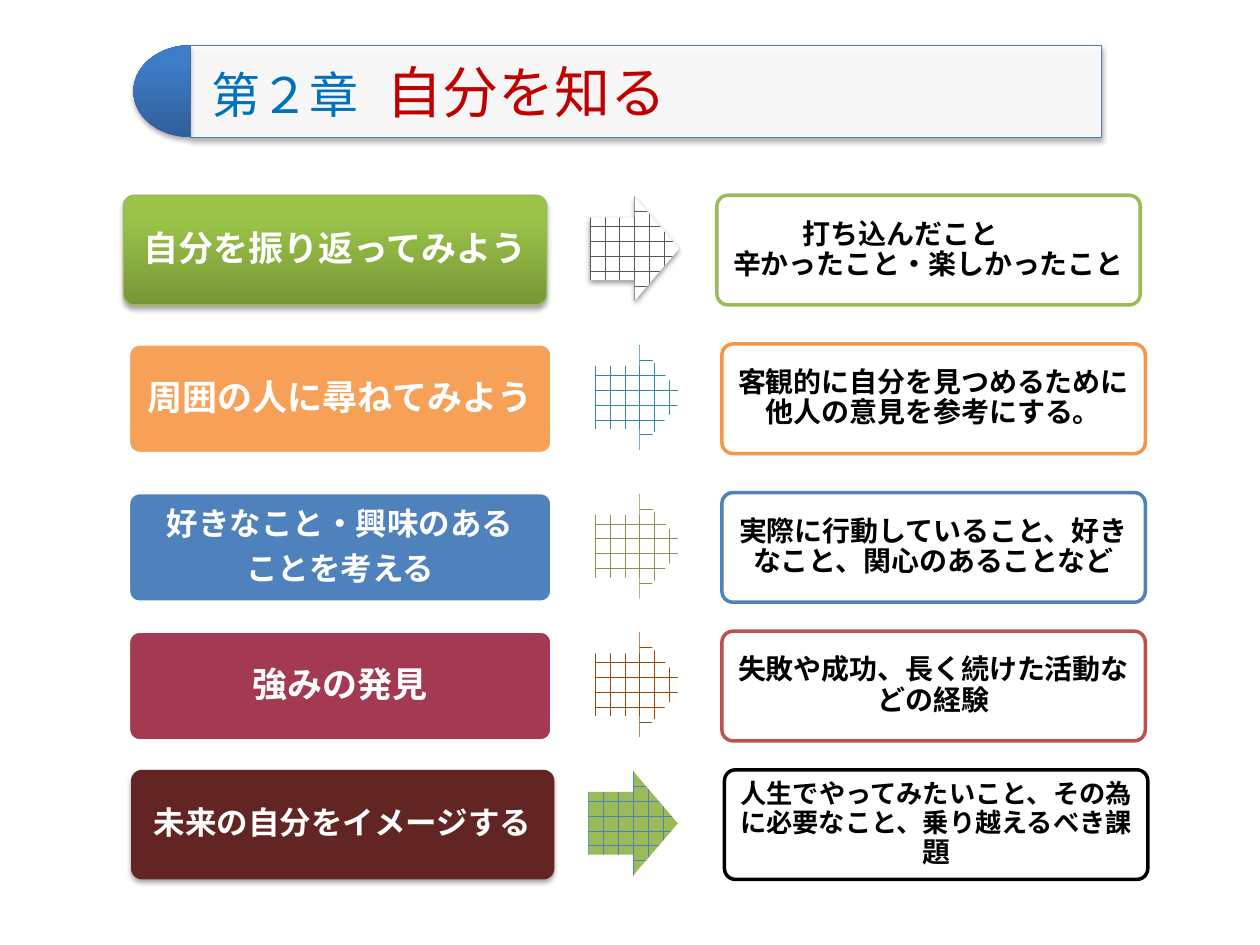
from lxml import etree
from pptx import Presentation
from pptx import util as u
from pptx.dml.color import RGBColor
from pptx.enum import dml, shapes, text
from pptx.oxml.ns import qn

HUES = dict(
    white="FFFFFF", black="000000", green="9BBB59", edge="98B955", moss="779737", lime="9BC348",
    orange="F79646", blue="4F81BD", wine="A43A51", red="C0504D", brown="632523",
    grey="595959", teal="31859C", sand="948A54", rust="984807",
    navy="2F5F99", sky="3D7CC7", frame="4B7EBC", azure="0070C0", crimson="C00000",
)
SANS = "Noto Sans CJK JP"


def hue(name):
    return RGBColor.from_string(HUES[name])


def dress(item, fill, line=None, width=2, alpha=None, pattern=None, shade=None):
    if pattern:
        item.fill.patterned()
        item.fill.pattern = dml.MSO_PATTERN.HORIZONTAL_BRICK
        item.fill.fore_color.rgb = hue(pattern)
        item.fill.back_color.rgb = hue(fill)
    elif isinstance(fill, tuple):
        item.fill.gradient()
        item.fill.gradient_angle = 90
        for stop, name, pos in zip(item.fill.gradient_stops, fill, (0, 0.8)):
            stop.color.rgb = hue(name)
            stop.position = pos
    else:
        item.fill.solid()
        item.fill.fore_color.rgb = hue(fill)
    props = item._element.spPr
    if alpha:
        tone = props.find(qn("a:solidFill"))[0]
        etree.SubElement(tone, qn("a:alpha"), val=str(alpha * 1000))
    if line:
        item.line.color.rgb = hue(line)
        item.line.width = u.Pt(width)
    else:
        item.line.fill.background()
    effects = etree.SubElement(props, qn("a:effectLst"))
    if shade:
        name, dim, blur, dist = shade
        cast = etree.SubElement(effects, qn("a:outerShdw"), blurRad=str(u.Pt(blur)),
                                dist=str(u.Pt(dist)), dir="5400000", rotWithShape="0")
        tone = etree.SubElement(cast, qn("a:srgbClr"), val=HUES[name])
        etree.SubElement(tone, qn("a:alpha"), val=str(dim * 1000))


def say(item, words, size=16, face="Calibri", tint="black", bold=True, pad=0.07,
        align=text.PP_ALIGN.CENTER, pitch=0.9):
    frame = item.text_frame
    frame.word_wrap = True
    frame.auto_size = text.MSO_AUTO_SIZE.NONE
    frame.vertical_anchor = text.MSO_ANCHOR.MIDDLE
    frame.margin_left = frame.margin_right = u.Inches(pad)
    frame.margin_top = frame.margin_bottom = u.Inches(pad)
    for i, row in enumerate(words.split("\n")):
        para = frame.add_paragraph() if i else frame.paragraphs[-1]
        para.alignment, para.line_spacing = align, pitch
        para.space_after = u.Pt(size * 0.35)
        for j, part in enumerate(row.split("\v")):
            if j:
                para.add_line_break()
                gap = para._p.findall(qn("a:br"))[-1]
                etree.SubElement(gap, qn("a:rPr"), sz=str(size * 100))
            run = para.add_run()
            run.text = part
            run.font.size, run.font.bold, run.font.name = u.Pt(size), bold, face
            run.font.color.rgb = hue(tint)
            etree.SubElement(run._r.rPr, qn("a:ea"), typeface=SANS)


deck = Presentation()
deck.slide_width, deck.slide_height = u.Inches(10), u.Inches(7.5)
slide = deck.slides.add_slide(deck.slide_layouts[5])
kind = shapes.MSO_SHAPE
soft = ("black", 35, 3.1, 1.8)

cap = slide.shapes.add_shape(kind.PIE, *map(u.Inches, (1.06, 0.36, 0.9, 0.73)))
cap.adjustments[0], cap.adjustments[1] = 54, 162
dress(cap, ("navy", "sky"), shade=soft)

title = slide.shapes.title
title.left, title.top, title.width, title.height = map(u.Inches, (1.51, 0.36, 7.23, 0.73))
dress(title, "white", line="frame", width=0.75, alpha=90, shade=soft)
for words, size, tint in (("第２章", 28, "azure"), ("\u3000".strip("\n"), 16, "crimson"),
                          ("自分を知る", 32, "crimson")):
    say(title, words, size=size, face=SANS, tint=tint, bold=False, pad=0.17,
        align=text.PP_ALIGN.LEFT, pitch=1)

ROWS = [
    (0.98, 1.55, "自分を振り返ってみよう", 20,
     dict(fill=("moss", "lime"), line="edge", width=0.75, shade=soft),
     4.68, dict(fill="white", pattern="grey", shade=("black", 38, 3.1, 1.6)),
     "green", [("打ち込んだこと　　\v辛かったこと・楽しかったこと", 16)]),
    (1.02, 2.73, "周囲の人に尋ねてみよう", 20, dict(fill="orange", line="white", alpha=90),
     4.72, dict(fill="white", pattern="teal"),
     "orange", [("客観的に自分を見つめるために\v他人の意見を参考にする。", 16)]),
    (1.02, 3.91, "好きなこと・興味のある\nことを考える", 18, dict(fill="blue", line="white"),
     4.72, dict(fill="white", pattern="sand"),
     "blue", [("実際に行動していること、好きなこと、関心のあることなど", 16)]),
    (1.02, 5.01, "強みの発見", 20, dict(fill="wine", line="white"),
     4.72, dict(fill="white", pattern="rust"),
     "red", [("失敗や成功、長く続けた活動などの経験", 16)]),
    (1.04, 6.11, "未来の自分をイメージする", 18, dict(fill="brown", shade=soft),
     4.67, dict(fill="green", pattern="blue", shade=("white", 43, 5, 2)),
     "black", [("人生でやってみたいこと、その為に必要なこと、乗り越えるべき課", 15), ("題", 16)]),
]
for left, top, step, size, look, mid, brick, rim, notes in ROWS:
    box = slide.shapes.add_shape(kind.ROUNDED_RECTANGLE, *map(u.Inches, (left, top, 3.36, 0.87)))
    box.adjustments[0] = 0.1
    dress(box, **look)
    say(box, step, size=size, face=SANS, tint="white", pad=size * 0.004)

    arrow = slide.shapes.add_shape(kind.RIGHT_ARROW, *map(u.Inches, (mid, top + 0.01, 0.71, 0.83)))
    arrow.adjustments[0], arrow.adjustments[1] = 0.6, 0.5
    dress(arrow, **brick)

    card = slide.shapes.add_shape(kind.ROUNDED_RECTANGLE,
                                  *map(u.Inches, (left + 4.71, top, 3.36, 0.87)))
    card.adjustments[0] = 0.1
    dress(card, "white", line=rim)
    for words, size in notes:
        say(card, words, size=size, pad=0.06)

deck.save("out.pptx")
